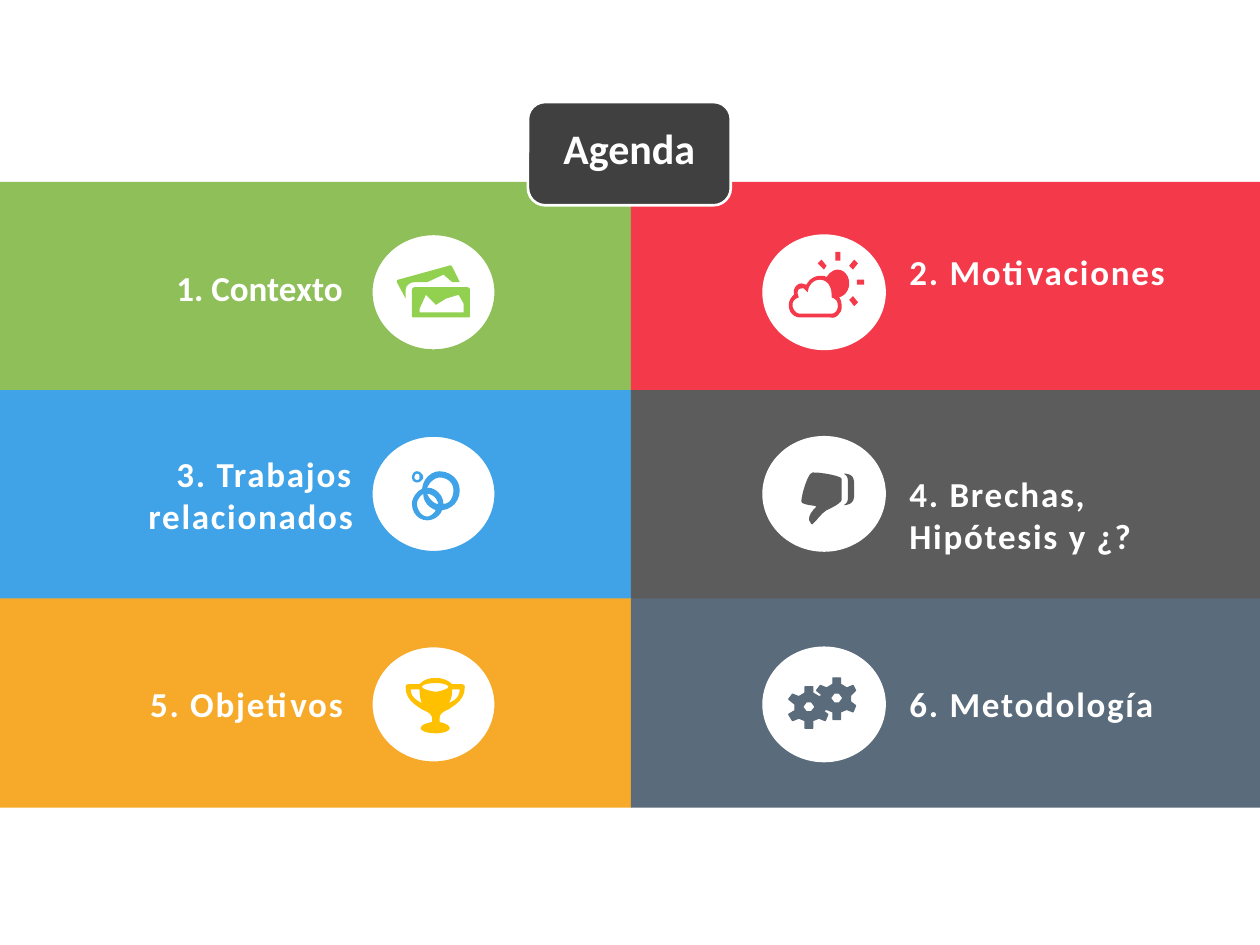
from pptx import Presentation
from pptx.dml.color import RGBColor
from pptx.enum.shapes import MSO_SHAPE
from pptx.enum.text import MSO_ANCHOR, MSO_AUTO_SIZE, PP_ALIGN
from pptx.util import Pt

FONT, WHITE, DARK = "Calibri", "FFFFFF", "404040"
GREEN, RED, BLUE = "8FBF59", "F4394A", "40A3E7"
GRAY, ORANGE, SLATE = "5C5C5C", "F7AA29", "5A6B7B"

TOPICS = [
    ("1. Contexto", GREEN, (87.1, 149, 115.9, 31.5), 0),
    ("2. Motivaciones", RED, (512.6, 139.7, 176.4, 31.5), 100),
    ("3. Trabajos relacionados", BLUE, (20.2, 254.9, 188.6, 55.4), 100),
    ("4. Brechas, Hipótesis y ¿?", GRAY, (512.6, 266.4, 187.9, 55.4), 100),
    ("5. Objetivos", ORANGE, (63.4, 386.6, 139.7, 31.5), 100),
    ("6. Metodología", SLATE, (512.6, 386.6, 159.1, 31.5), 100),
]
PANEL_W, PANEL_H, PANEL_TOP, PITCH_X, PITCH_Y = 361, 119.5, 104, 360.5, 119
CIRCLE_X, CIRCLE_Y, CIRCLE_SIZE = (212.4, 435.6), (133.9, 249.1, 369.4), (70.6, 66.2)

# Contours: pairs are corners, sextuples are cubic curves, in units of UNIT points.
UNIT, FINE, STEPS = 0.72, 10, 6
PHOTOS = [
    [(50, 14), (44, 2), (44, 1, 42, 0, 41, 1), (1, 12), (0, 12, 0, 13, 0, 14), (7, 27),
     (7, 20), (7, 17, 10, 14, 14, 14), (24, 14), (37, 8), (44, 14)],
    [(56, 18), (14, 18), (13, 18, 12, 19, 12, 20), (12, 41), (12, 42, 13, 42, 14, 42),
     (56, 42), (57, 42, 58, 42, 58, 41), (58, 20), (58, 19, 57, 18, 56, 18)],
    [(53, 38), (18, 38), (18, 35), (23, 24), (31, 32), (39, 27), (49, 24), (53, 31)],
]
BUBBLES = [
    [(22, 0), (15, 0, 9, 6, 8, 14), (4, 16, 0, 21, 0, 26), (0, 34, 6, 39, 12, 39),
     (17, 39, 22, 36, 24, 31), (32, 30, 38, 24, 38, 15), (38, 7, 31, 0, 22, 0)],
    [(12, 36), (8, 36, 4, 31, 4, 26), (4, 23, 6, 20, 9, 18), (9, 25, 14, 29, 19, 31),
     (18, 33, 15, 36, 12, 36)],
    [(12, 18), (17, 18, 20, 22, 21, 26), (17, 26, 14, 22, 12, 18)],
    [(25, 26), (25, 19, 19, 13, 12, 13), (14, 9, 18, 5, 22, 5), (28, 5, 33, 9, 33, 15),
     (33, 21, 30, 26, 25, 26)],
    [(4, 9), (6, 9, 9, 7, 9, 5), (9, 2, 6, 0, 4, 0), (2, 0, 0, 2, 0, 5), (0, 7, 2, 9, 4, 9)],
    [(4, 2), (6, 2, 6, 3, 6, 5), (6, 6, 6, 7, 4, 7), (3, 7, 2, 6, 2, 5), (2, 3, 3, 2, 4, 2)],
]
TROPHY = [
    [(27, 32), (27, 29, 29, 27, 34, 25), (40, 21, 47, 17, 47, 7), (47, 6, 46, 5, 45, 5),
     (37, 5), (35, 3, 31, 0, 24, 0), (16, 0, 13, 3, 11, 5), (2, 5), (1, 5, 0, 6, 0, 7),
     (0, 17, 7, 21, 13, 25), (18, 27, 21, 29, 21, 32), (21, 35), (15, 36, 12, 38, 12, 40),
     (12, 42, 17, 44, 24, 44), (30, 44, 35, 42, 35, 40), (35, 38, 32, 36, 27, 35)],
    [(34, 20), (36, 18, 37, 14, 37, 9), (43, 9), (43, 15, 39, 18, 34, 20)],
    [(24, 4), (31, 4, 34, 6, 34, 7), (34, 8, 31, 10, 24, 11), (16, 10, 13, 8, 13, 7),
     (13, 6, 16, 4, 24, 4)],
    [(4, 9), (11, 9), (11, 14, 12, 18, 13, 20), (9, 18, 4, 15, 4, 9)],
]
THUMB = [
    [(12, 27), (12, 28, 2, 35, 8, 41), (9, 43, 14, 34, 20, 30), (23, 29, 32, 24, 32, 22),
     (32, 5), (32, 3, 18, 0, 9, 0), (5, 0, 0, 19, 0, 23), (0, 26, 11, 26, 12, 27)],
    [(34, 26), (36, 26, 42, 25, 42, 19), (42, 8), (42, 1, 36, 1, 34, 1),
     (33, 1, 37, 2, 37, 6), (37, 21), (37, 25, 33, 26, 34, 26)],
]
CLOUD = [
    [(48, 11), (48, 5, 44, 0, 39, 0), (35, 0, 32, 3, 30, 6), (29, 5, 27, 5, 25, 5),
     (20, 5, 16, 8, 14, 12), (13, 12, 11, 11, 10, 11), (7, 11, 4, 14, 4, 18), (4, 20),
     (2, 22, 0, 25, 0, 28), (0, 34, 4, 38, 9, 38), (33, 38), (36, 39, 39, 37, 40, 35),
     (42, 33, 42, 31, 42, 29), (42, 26, 41, 23, 40, 22), (44, 21, 48, 17, 48, 11)],
    [(34, 35), (9, 35), (6, 35, 3, 32, 3, 28), (3, 26, 4, 24, 6, 23), (8, 22), (7, 19),
     (7, 16, 8, 15, 10, 15), (12, 15), (15, 18), (16, 14), (18, 10, 21, 8, 25, 8),
     (30, 8, 34, 13, 34, 19), (34, 22), (36, 23), (38, 24, 39, 26, 39, 29),
     (39, 32, 37, 35, 34, 35)],
]
GEAR = [
    [(27, 14), (31, 10), (29, 6), (24, 8), (19, 5), (19, 0), (13, 0), (13, 5), (8, 8),
     (3, 6), (0, 10), (5, 14), (5, 19), (0, 22), (3, 27), (8, 25), (13, 27), (13, 33),
     (19, 33), (19, 27), (24, 25), (29, 27), (31, 22), (27, 19)],
    [(18, 20), (14, 20), (11, 16), (14, 12), (18, 12), (21, 16)],
]
ICONS = [
    (PHOTOS, 226.8, 151.2, "92D050", None),
    (BUBBLES, 235.4, 269.3, BLUE, None),
    (TROPHY, 231.8, 387.4, "FFC000", None),
    (THUMB, 457.9, 270, GRAY, None),
    (CLOUD, 450.7, 154.1, RED, None),
    ([[(4, 0), (7, 3), (3, 8), (0, 5)]], 485.3, 148.3, RED, None),
    ([[(4, 8), (0, 3), (3, 0), (7, 5)]], 485.3, 169.2, RED, None),
    ([[(3, 0), (7, 5), (5, 8), (0, 3)]], 467.3, 148.3, RED, None),
    (GEAR, 466.6, 387.4, SLATE, SLATE),
    (GEAR, 450.7, 392.4, SLATE, SLATE),
]
RAYS = [(477.4, 144, 2.9, 5), (489.6, 159.8, 4.3, 2.9)]


def rgb(value):
    return RGBColor.from_string(value)


def paint(sp, fill, line=None, width=1):
    sp.shadow.inherit = False
    sp.fill.solid()
    sp.fill.fore_color.rgb = rgb(fill)
    if line:
        sp.line.color.rgb = rgb(line)
        sp.line.width = Pt(width)
    else:
        sp.line.fill.background()


def add_shape(s, kind, box, *style):
    paint(s.shapes.add_shape(kind, *map(Pt, box)), *style)


def flatten(contour):
    points = [contour[0]]
    for seg in contour[1:]:
        if len(seg) == 2:
            points.append(seg)
            continue
        ctrl = [points[-1], seg[:2], seg[2:4], seg[4:]]
        for i in range(1, STEPS + 1):
            t = i / STEPS
            weights = ((1 - t) ** 3, 3 * t * (1 - t) ** 2, 3 * t * t * (1 - t), t ** 3)
            points.append(tuple(sum(w * c[k] for w, c in zip(weights, ctrl)) for k in (0, 1)))
    return [(x * FINE, y * FINE) for x, y in points]


def add_icon(s, contours, left, top, fill, line):
    paths = [flatten(c) for c in contours]
    builder = s.shapes.build_freeform(*paths[0][0], scale=Pt(UNIT / FINE))
    for i, points in enumerate(paths):
        if i:
            builder.move_to(*points[0])
        builder.add_line_segments(points[1:], close=True)
    paint(builder.convert_to_shape(Pt(left), Pt(top)), fill, line, 0.75)


def write(sp, text, size, align, spacing=0):
    tf = sp.text_frame
    tf.word_wrap = True
    tf.auto_size = MSO_AUTO_SIZE.SHAPE_TO_FIT_TEXT
    tf.vertical_anchor = MSO_ANCHOR.TOP
    p = tf.paragraphs[0]
    p.alignment = align
    r = p.add_run()
    r.text = text
    r.font.name, r.font.size, r.font.bold = FONT, Pt(size), True
    r.font.color.rgb = rgb(WHITE)
    if spacing:
        r.font._element.set("spc", str(spacing))


def main():
    prs = Presentation()
    prs.slide_width, prs.slide_height = Pt(720), Pt(540)
    s = prs.slides.add_slide(prs.slide_layouts[5])

    for i, (_, color, _, _) in enumerate(TOPICS):
        row, col = divmod(i, 2)
        box = (col * PITCH_X, PANEL_TOP + row * PITCH_Y, PANEL_W, PANEL_H)
        add_shape(s, MSO_SHAPE.RECTANGLE, box, color)
    for i, (_, color, _, _) in enumerate(TOPICS):
        row, col = divmod(i, 2)
        box = (CIRCLE_X[col], CIRCLE_Y[row], *CIRCLE_SIZE)
        add_shape(s, MSO_SHAPE.OVAL, box, WHITE, None if col else color)

    add_shape(s, MSO_SHAPE.ROUNDED_RECTANGLE, (301.7, 58.3, 115.9, 59), DARK, WHITE, 1.5)
    title = s.shapes.title
    title.left, title.top, title.width, title.height = map(Pt, (301.7, 66.2, 115.9, 36))
    write(title, "Agenda", 24, PP_ALIGN.CENTER)
    title.element.getparent().append(title.element)

    for icon in ICONS:
        add_icon(s, *icon)
    for ray in RAYS:
        add_shape(s, MSO_SHAPE.RECTANGLE, ray, RED)
    for i, (text, _, box, spacing) in enumerate(TOPICS):
        align = PP_ALIGN.LEFT if i % 2 else PP_ALIGN.RIGHT
        write(s.shapes.add_textbox(*map(Pt, box)), text, 20, align, spacing)

    prs.save("out.pptx")


if __name__ == "__main__":
    main()
